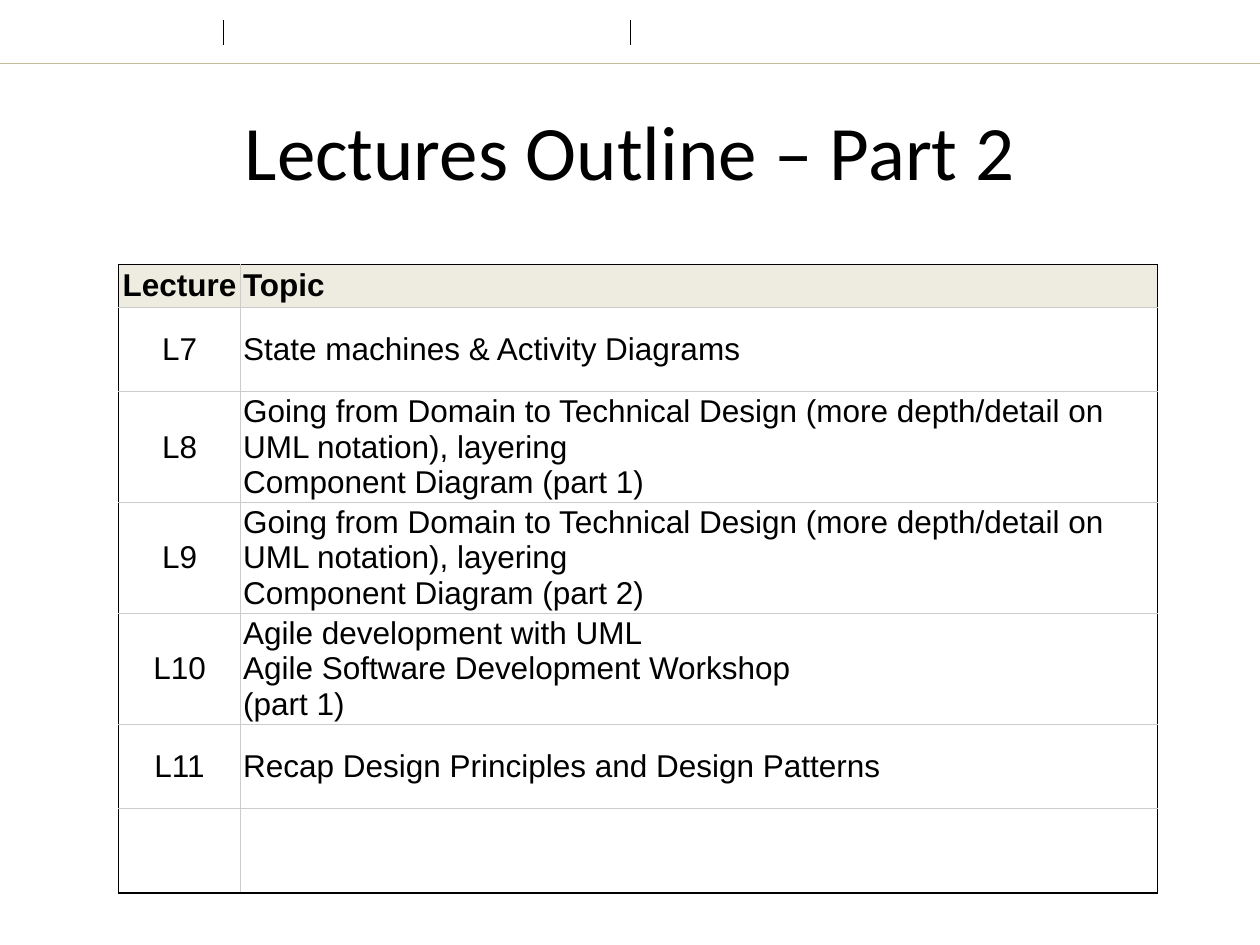
from dataclasses import dataclass

from lxml import etree
from pptx import Presentation
from pptx.dml.color import RGBColor
from pptx.enum.shapes import MSO_CONNECTOR
from pptx.enum.text import MSO_ANCHOR, PP_ALIGN
from pptx.oxml.ns import qn
from pptx.util import Inches, Pt

STRAIGHT = MSO_CONNECTOR.STRAIGHT
MIDDLE = MSO_ANCHOR.MIDDLE
CENTER, LEFT = PP_ALIGN.CENTER, PP_ALIGN.LEFT


@dataclass(frozen=True)
class Theme:
    ink: str = "000000"
    rule: str = "C4BD97"
    grid: str = "CCCCCC"
    head: str = "EEECE1"
    title_font: str = "Calibri"
    body_font: str = "Arial"
    title_size: float = 44
    body_size: float = 18
    edge: float = 0.75
    inset: float = 0.02


class Deck:
    """Holds the theme and the current slide and draws each kind of element."""

    def __init__(self, theme):
        self.theme = theme
        self.show = Presentation()
        self.show.slide_width, self.show.slide_height = Inches(10), Inches(7.5)
        self.slide = self.show.slides.add_slide(self.show.slide_layouts[5])

    def style(self, frame, font, size, align, bold=False):
        for para in frame.paragraphs:
            para.alignment = align
            for run in para.runs:
                run.font.name, run.font.size, run.font.bold = font, Pt(size), bold
                run.font.color.rgb = RGBColor.from_string(self.theme.ink)

    def line(self, start, end, color, width):
        ends = [Inches(value) for value in (*start, *end)]
        line = self.slide.shapes.add_connector(STRAIGHT, *ends)
        line.line.color.rgb = RGBColor.from_string(color)
        line.line.width = Pt(width)
        etree.SubElement(line._element.spPr, qn("a:effectLst"))

    def title(self, text, left, top, width, height):
        title = self.slide.shapes.title
        title.left, title.top = Inches(left), Inches(top)
        title.width, title.height = Inches(width), Inches(height)
        frame = title.text_frame
        frame.text = text
        frame.vertical_anchor = MIDDLE
        self.style(frame, self.theme.title_font, self.theme.title_size, CENTER)

    def border(self, cell, side, color):
        props = cell._tc.get_or_add_tcPr()
        width = str(Pt(self.theme.edge))
        line = etree.SubElement(props, qn(f"a:ln{side}"), w=width)
        fill = etree.SubElement(line, qn("a:solidFill"))
        etree.SubElement(fill, qn("a:srgbClr"), val=color)

    def cell(self, cell, text, align, outer, head):
        theme = self.theme
        cell.text = text
        cell.vertical_anchor = MIDDLE
        cell.margin_left = cell.margin_right = Inches(theme.inset)
        cell.margin_top = cell.margin_bottom = Inches(theme.inset)
        self.style(cell.text_frame, theme.body_font, theme.body_size, align, head)
        for side in "LRTB":
            self.border(cell, side, theme.ink if side in outer else theme.grid)
        if head:
            cell.fill.solid()
            cell.fill.fore_color.rgb = RGBColor.from_string(theme.head)
        else:
            cell.fill.background()

    def table(self, data, left, top, widths, heights):
        box = [Inches(v) for v in (left, top, sum(widths), sum(heights))]
        table = self.slide.shapes.add_table(len(data), len(widths), *box).table
        table.first_row = table.horz_banding = False
        for col, width in zip(table.columns, widths):
            col.width = Inches(width)
        last = len(data) - 1
        for r, (row, height) in enumerate(zip(data, heights)):
            table.rows[r].height = Inches(height)
            ends = {0: "T", last: "B"}.get(r, "")
            for c, text in enumerate(row):
                align, side = (LEFT, "R") if c else (CENTER, "L")
                self.cell(table.cell(r, c), text, align, side + ends, r == 0)


def main():
    theme = Theme()
    deck = Deck(theme)
    deck.line((0, 0.5), (10, 0.5), theme.rule, 0.25)
    for left in (1.77, 5):
        deck.line((left, 0.16), (left, 0.36), theme.ink, 0.5)
    deck.title("Lectures Outline – Part 2", 0.5, 0.5, 9, 1.38)
    design = (
        "Going from Domain to Technical Design (more depth/detail on "
        "UML notation), layering\vComponent Diagram (part {})"
    )
    data = [
        ("Lecture", "Topic"),
        ("L7", "State machines & Activity Diagrams"),
        ("L8", design.format(1)),
        ("L9", design.format(2)),
        (
            "L10",
            "Agile development with UML\v"
            "Agile Software Development Workshop\v(part 1)",
        ),
        ("L11", "Recap Design Principles and Design Patterns"),
        ("", ""),
    ]
    heights = [0.34] + [0.67] * (len(data) - 1)
    deck.table(data, 0.94, 2.1, (0.97, 7.28), heights)
    deck.show.save("out.pptx")


if __name__ == "__main__":
    main()
